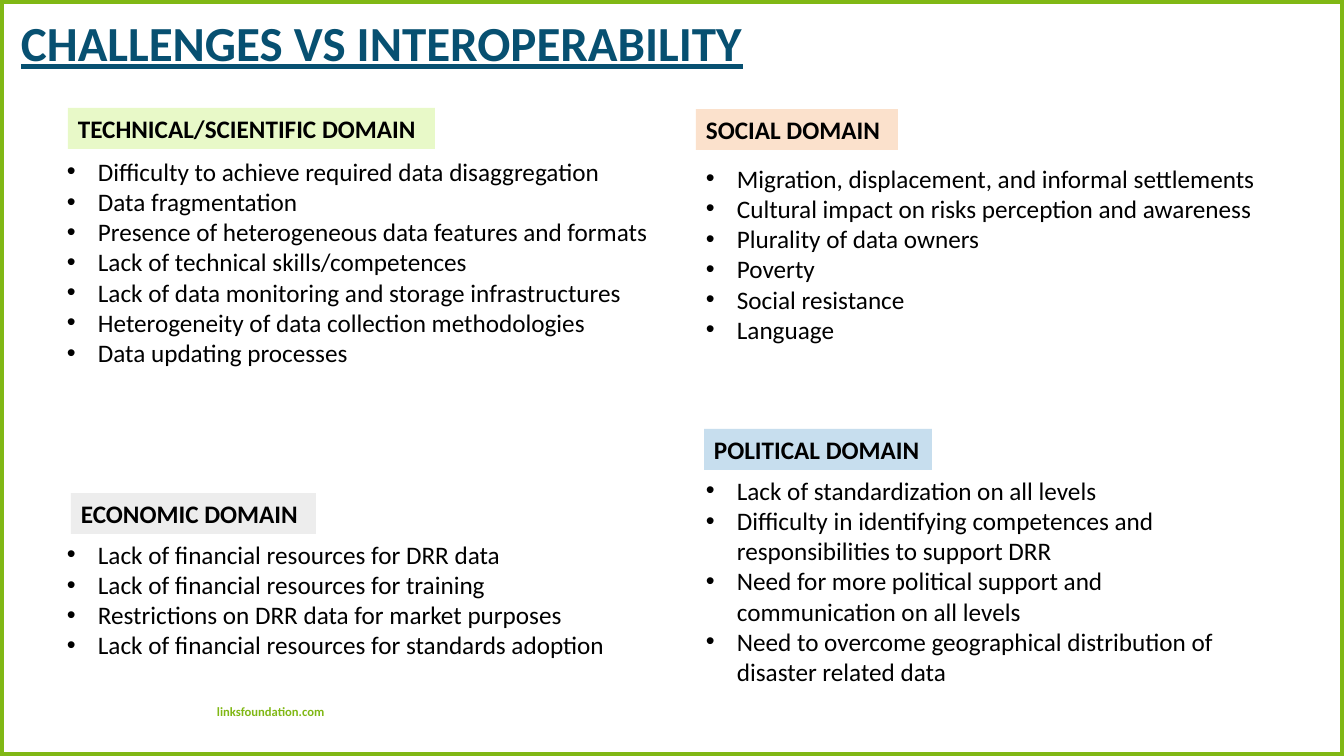
"""Build the slide on challenges versus interoperability by domain."""
from dataclasses import dataclass

from lxml import etree
from pptx import Presentation
from pptx.dml.color import RGBColor
from pptx.enum.shapes import MSO_SHAPE
from pptx.enum.text import MSO_ANCHOR, PP_ALIGN
from pptx.oxml.ns import qn
from pptx.util import Pt

RECT = MSO_SHAPE.RECTANGLE
LEFT = PP_ALIGN.LEFT
TOP, MIDDLE = MSO_ANCHOR.TOP, MSO_ANCHOR.MIDDLE
SCALE = 914400 / 100.8
WIDE, HIGH = 1344, 756


@dataclass(frozen=True)
class Theme:
    """Colours, font and type sizes of the slide."""
    font: str = "Calibri"
    ink: str = "000000"
    green: str = "80B815"
    teal: str = "075071"
    lime: str = "E8F9C8"
    peach: str = "FBE1CC"
    grey: str = "EDEDED"
    sky: str = "C7DEEE"
    title: int = 35
    body: int = 18
    small: int = 9
    frame: int = 6


def px(size):
    """Turn pixels into EMU."""
    return round(size * SCALE)


class Deck:
    """Holds the theme and the current slide."""

    def __init__(self, theme):
        """Start a deck with one blank slide."""
        self.theme = theme
        self.show = Presentation()
        self.show.slide_width, self.show.slide_height = px(WIDE), px(HIGH)
        self.slide = self.show.slides.add_slide(self.show.slide_layouts[6])

    def text(self, shape, lines, size, color, bold=False, anchor=TOP):
        """Fill a shape with left-aligned lines and return its frame."""
        frame = shape.text_frame
        frame.word_wrap = True
        frame.vertical_anchor = anchor
        frame.text = "\n".join(lines)
        for para in frame.paragraphs:
            para.alignment = LEFT
            for run in para.runs:
                font = run.font
                font.name, font.size, font.bold = self.theme.font, Pt(size), bold
                font.color.rgb = RGBColor.from_string(color)
        return frame

    def box(self, *area):
        """Add an empty text box."""
        return self.slide.shapes.add_textbox(*map(px, area))

    def rect(self, *area):
        """Add a plain rectangle without fill or line."""
        shape = self.slide.shapes.add_shape(RECT, *map(px, area))
        shape.shadow.inherit = False
        shape.fill.background()
        shape.line.fill.background()
        return shape

    def border(self):
        """Draw the frame around the slide."""
        line = self.rect(0, 0, WIDE, HIGH).line
        line.color.rgb = RGBColor.from_string(self.theme.green)
        line.width = Pt(self.theme.frame)

    def title(self, text, *area):
        """Add the underlined heading."""
        look = self.theme
        frame = self.text(self.box(*area), [text], look.title, look.teal, True)
        para = frame.paragraphs[0]
        para.line_spacing = 0.9
        para.runs[0].font.underline = True

    def footer(self, text, *area):
        """Add the small web address."""
        look = self.theme
        frame = self.text(self.box(*area), [text], look.small, look.green, True, MIDDLE)
        frame.margin_left = frame.margin_right = px(3)
        frame.margin_top = frame.margin_bottom = px(3)

    def label(self, text, fill, *area):
        """Add a coloured domain label."""
        shape = self.rect(*area)
        shape.fill.solid()
        shape.fill.fore_color.rgb = RGBColor.from_string(fill)
        self.text(shape, [text], self.theme.body, self.theme.ink, True)

    def bullets(self, items, *area):
        """Add a bulleted list."""
        frame = self.text(self.box(*area), items, self.theme.body, self.theme.ink)
        for para in frame.paragraphs:
            props = para._p.get_or_add_pPr()
            props.set("marL", str(px(31)))
            props.set("indent", str(-px(31)))
            etree.SubElement(props, qn("a:buFont")).set("typeface", "Arial")
            etree.SubElement(props, qn("a:buChar")).set("char", "•")


def main():
    """Build and save the slide."""
    theme = Theme()
    deck = Deck(theme)
    deck.border()
    deck.footer("linksfoundation.com", 214, 701, 116, 21)
    deck.title("CHALLENGES VS INTEROPERABILITY", 11, 14, 942, 63)
    domains = [
        ("TECHNICAL/SCIENTIFIC DOMAIN", theme.lime, (68, 108, 367, 41),
         (57, 151, 672, 224), [
             "Difficulty to achieve required data disaggregation",
             "Data fragmentation",
             "Presence of heterogeneous data features and formats",
             "Lack of technical skills/competences",
             "Lack of data monitoring and storage infrastructures",
             "Heterogeneity of data collection methodologies",
             "Data updating processes"]),
        ("SOCIAL DOMAIN", theme.peach, (696, 109, 202, 41),
         (696, 158, 640, 194), [
             "Migration, displacement, and informal settlements",
             "Cultural impact on risks perception and awareness",
             "Plurality of data owners",
             "Poverty",
             "Social resistance",
             "Language"]),
        ("ECONOMIC DOMAIN", theme.grey, (71, 493, 245, 41),
         (57, 534, 672, 132), [
             "Lack of financial resources for DRR data",
             "Lack of financial resources for training",
             "Restrictions on DRR data for market purposes",
             "Lack of financial resources for standards adoption"]),
        ("POLITICAL DOMAIN", theme.sky, (704, 429, 228, 41),
         (696, 470, 569, 224), [
             "Lack of standardization on all levels",
             "Difficulty in identifying competences and responsibilities to support DRR",
             "Need for more political support and communication on all levels",
             "Need to overcome geographical distribution of disaster related data"]),
    ]
    for name, fill, tag, area, items in domains:
        deck.label(name, fill, *tag)
        deck.bullets(items, *area)
    deck.show.save("out.pptx")


if __name__ == "__main__":
    main()
